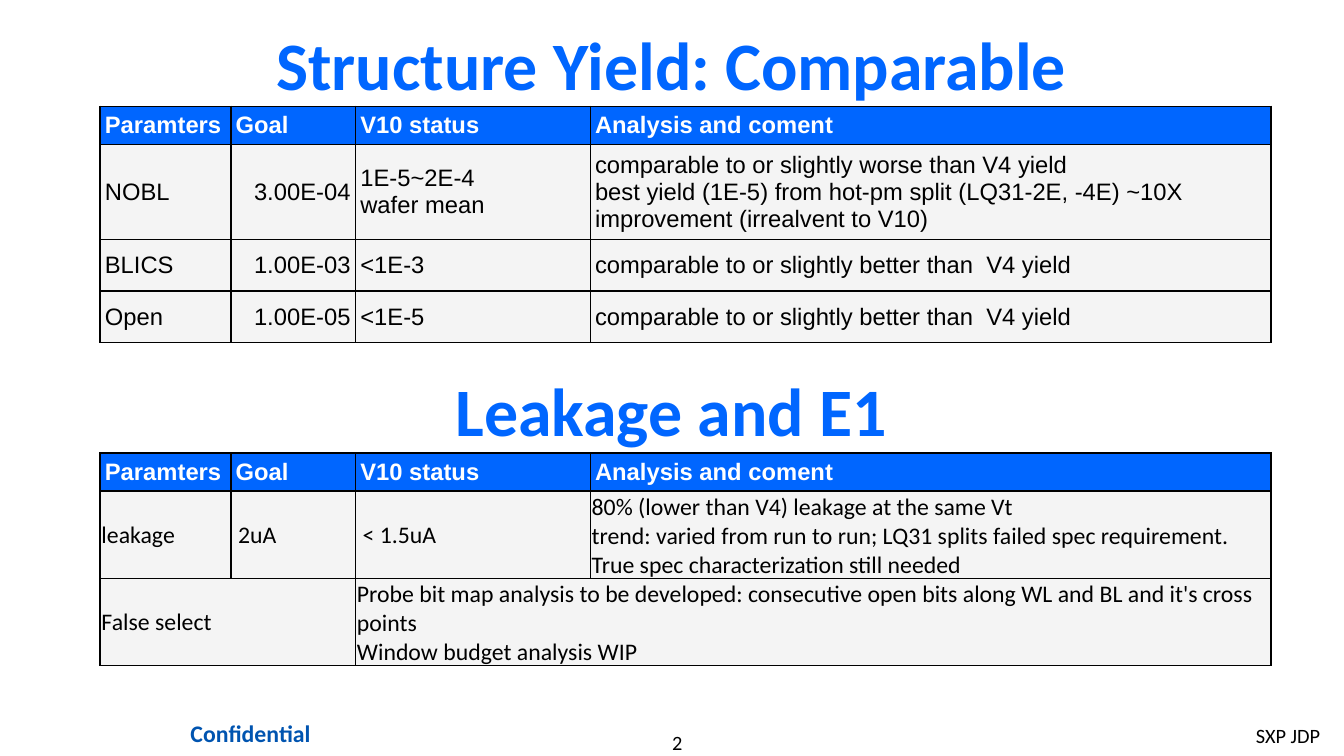
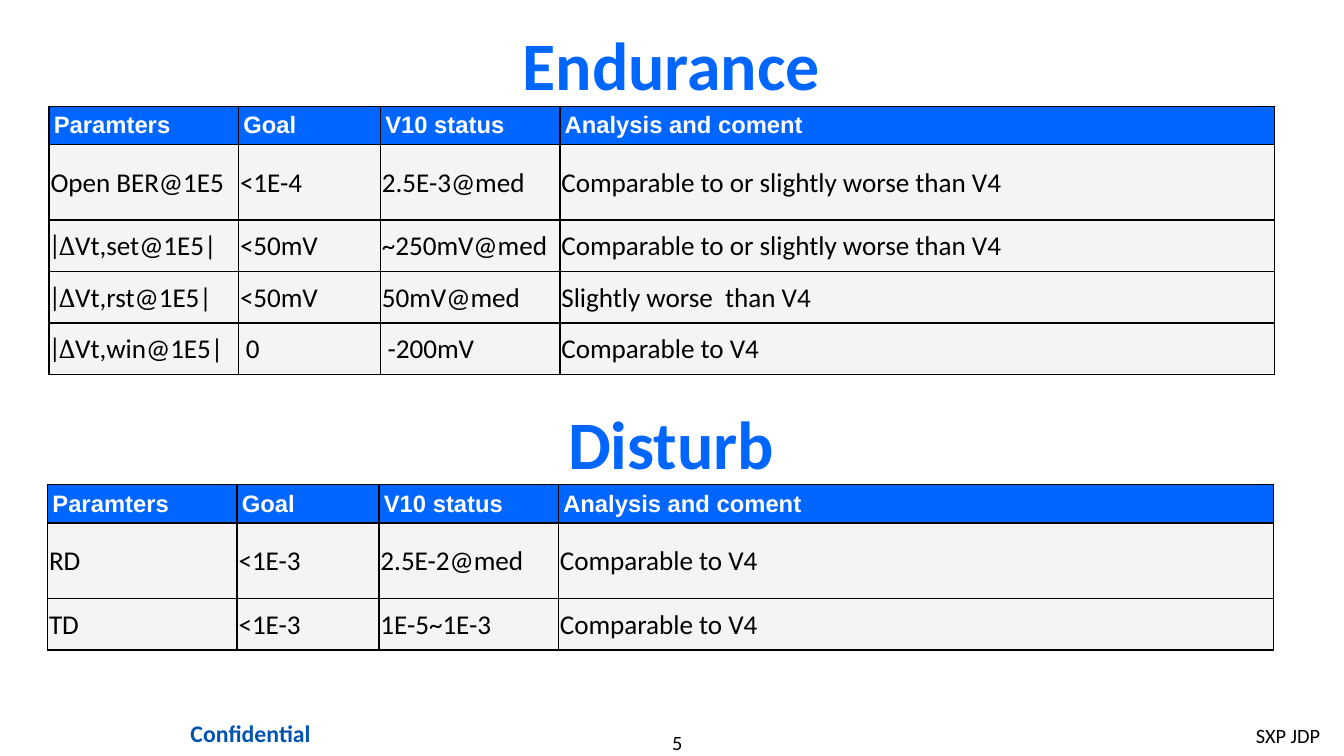
from collections import namedtuple
from dataclasses import dataclass

from lxml import etree
from pptx import Presentation
from pptx.dml.color import RGBColor
from pptx.enum.text import MSO_ANCHOR as Anchor, MSO_AUTO_SIZE as AutoSize, PP_ALIGN as Align
from pptx.oxml.ns import qn
from pptx.util import Cm, Pt


@dataclass(frozen=True)
class Theme:
    blue: str = "0066FF"
    footer_blue: str = "0054B0"
    black: str = "000000"
    white: str = "FFFFFF"
    row_grey: str = "F4F4F4"
    sans: str = "Calibri"
    grid: str = "Arial"
    symbol: str = "Cambria"
    title_size: int = 40
    table_size: int = 14
    large_size: int = 16
    footer_size: int = 12
    border: float = 1


THEME = Theme()

# Table rules: lengths in cm, insets as left, top, right, bottom
HEADINGS = ["Paramters", "Goal", "V10 status", "Analysis and coment"]
HEADER_ROW, FIRST_ROW, OTHER_ROW = 0.53, 1.57, 1.07
ROOMY = (0.1, 0.1, 0.1, 0.1)
TIGHT = (0.03, 0.03, 0.03, 0)
INDENT = 0.12
DELTA = "|∆"

BodyStyle = namedtuple("BodyStyle", "font size insets goal_align")
YIELD_BODY = BodyStyle(THEME.grid, THEME.table_size, ROOMY, Align.RIGHT)
LEAKAGE_BODY = BodyStyle(THEME.sans, THEME.table_size, TIGHT, Align.LEFT)
RELIABILITY_BODY = BodyStyle(THEME.sans, THEME.large_size, TIGHT, Align.LEFT)

# A cell whose text is set in a little, or which spans several columns
Entry = namedtuple("Entry", "text indent span", defaults=(0, 1))

YIELD_COLUMNS = (2.72, 2.59, 4.88, 14.15)
RELIABILITY_COLUMNS = (3.94, 2.95, 3.73, 14.86)

YIELD_ROWS = [
    ["NOBL", "3.00E-04", "1E-5~2E-4\vwafer mean",
     "comparable to or slightly worse than V4 yield\v"
     "best yield (1E-5) from hot-pm split (LQ31-2E, -4E) ~10X improvement (irrealvent to V10)"],
    ["BLICS", "1.00E-03", "<1E-3", "comparable to or slightly better than  V4 yield"],
    ["Open", "1.00E-05", "<1E-5", "comparable to or slightly better than  V4 yield"],
]
LEAKAGE_ROWS = [
    ["leakage", Entry("2uA", INDENT), Entry("< 1.5uA", INDENT),
     "80% (lower than V4) leakage at the same Vt\v"
     "trend: varied from run to run; LQ31 splits failed spec requirement.\v"
     "True spec characterization still needed"],
    [Entry("False select", span=2),
     Entry("Probe bit map analysis to be developed: consecutive open bits along WL and BL "
           "and it's cross points\nWindow budget analysis WIP", span=2)],
]
ENDURANCE_ROWS = [
    ["Open BER@1E5", "<1E-4", "2.5E-3@med", "Comparable to or slightly worse than V4"],
    ["|∆Vt,set@1E5|", "<50mV", "~250mV@med", "Comparable to or slightly worse than V4"],
    ["|∆Vt,rst@1E5|", "<50mV", "50mV@med", "Slightly worse  than V4"],
    ["|∆Vt,win@1E5|", Entry("0", INDENT), Entry("-200mV", INDENT), "Comparable to V4"],
]
DISTURB_ROWS = [
    ["RD", "<1E-3", "2.5E-2@med", "Comparable to V4"],
    ["TD", "<1E-3", "1E-5~1E-3", "Comparable to V4"],
]


class Deck:
    """Holds the theme and the current slide."""

    def __init__(self, theme):
        self.theme = theme
        self.presentation = Presentation()
        self.presentation.slide_width = Cm(27.94)
        self.presentation.slide_height = Cm(15.72)
        self.slide = None

    def new_slide(self, title, number):
        layout = self.presentation.slide_layouts[5]
        self.slide = self.presentation.slides.add_slide(layout)
        heading = self.slide.shapes.title
        heading.left, heading.top, heading.width, heading.height = map(Cm, (2.08, 0.36, 23.75, 1.93))
        self.style_heading(heading.text_frame, title)
        self.footer(number)

    def format_text(self, frame, font, size, color, bold=False, align=Align.LEFT):
        for paragraph in frame.paragraphs:
            paragraph.alignment = align
            for run in paragraph.runs:
                run.font.name = font
                run.font.size = Pt(size)
                run.font.bold = bold
                run.font.color.rgb = RGBColor.from_string(color)

    def style_heading(self, frame, text):
        frame.text = text
        frame.word_wrap = True
        frame.auto_size = AutoSize.NONE
        frame.vertical_anchor = Anchor.MIDDLE
        self.format_text(frame, self.theme.sans, self.theme.title_size, self.theme.blue,
                         True, Align.CENTER)

    def text_box(self, left, top, width, height):
        return self.slide.shapes.add_textbox(Cm(left), Cm(top), Cm(width), Cm(height)).text_frame

    def section_heading(self, text, top):
        self.style_heading(self.text_box(2.08, top, 23.75, 1.93), text)

    def footer(self, number):
        theme = self.theme
        page = self.text_box(11.63, 15.19, 4.9, 0.51)
        page.margin_left = page.margin_top = page.margin_right = page.margin_bottom = 0
        page.word_wrap = True
        page.text = str(number)
        self.format_text(page, theme.sans, theme.footer_size, theme.black, align=Align.CENTER)

        project = self.text_box(25.86, 14.91, 1.85, 0.76)
        project.word_wrap = False
        project.text = "SXP JDP"
        self.format_text(project, theme.sans, theme.footer_size, theme.black)

        notice = self.text_box(3.23, 14.83, 3.96, 0.86)
        notice.word_wrap = True
        notice.text = "Confidential"
        self.format_text(notice, theme.sans, theme.table_size, theme.footer_blue,
                         True, Align.CENTER)

    def style_cell(self, cell, fill, insets, indent=0):
        left, top, right, bottom = insets
        cell.margin_left, cell.margin_top = Cm(left + indent), Cm(top)
        cell.margin_right, cell.margin_bottom = Cm(right), Cm(bottom)
        cell.vertical_anchor = Anchor.MIDDLE
        # Borders go before the fill
        properties = cell._tc.get_or_add_tcPr()
        for side in ("a:lnL", "a:lnR", "a:lnT", "a:lnB"):
            line = etree.SubElement(properties, qn(side), w=str(Pt(self.theme.border)))
            solid = etree.SubElement(line, qn("a:solidFill"))
            etree.SubElement(solid, qn("a:srgbClr"), val=self.theme.black)
        cell.fill.solid()
        cell.fill.fore_color.rgb = RGBColor.from_string(fill)

    def body_cell(self, cell, entry, body, align):
        frame = cell.text_frame
        has_delta = entry.text.startswith(DELTA)
        frame.text = DELTA if has_delta else entry.text
        if has_delta:
            frame.paragraphs[0].add_run().text = entry.text[len(DELTA):]
        self.format_text(frame, body.font, body.size, self.theme.black, align=align)
        if has_delta:
            frame.paragraphs[0].runs[0].font.name = self.theme.symbol

    def table(self, left, top, columns, rows, body):
        theme = self.theme
        heights = [HEADER_ROW, FIRST_ROW] + [OTHER_ROW] * (len(rows) - 1)
        grid = self.slide.shapes.add_table(
            len(heights), len(columns), Cm(left), Cm(top), Cm(sum(columns)), Cm(sum(heights))).table
        grid.first_row = grid.horz_banding = False
        for column, width in zip(grid.columns, columns):
            column.width = Cm(width)
        for row, height in zip(grid.rows, heights):
            row.height = Cm(height)

        # Header row
        for index, heading in enumerate(HEADINGS):
            cell = grid.cell(0, index)
            cell.text_frame.text = heading
            self.format_text(cell.text_frame, theme.grid, theme.table_size, theme.white, True)
            self.style_cell(cell, theme.blue, ROOMY)

        # Body rows
        for row_index, row in enumerate(rows, 1):
            column_index = 0
            for item in row:
                entry = item if isinstance(item, Entry) else Entry(item)
                last = column_index + entry.span - 1
                cell = grid.cell(row_index, column_index)
                for covered in range(column_index, last + 1):
                    self.style_cell(grid.cell(row_index, covered), theme.row_grey,
                                    body.insets, entry.indent)
                if entry.span > 1:
                    cell.merge(grid.cell(row_index, last))
                align = body.goal_align if column_index == 1 else Align.LEFT
                self.body_cell(cell, entry, body, align)
                column_index = last + 1

    def save(self):
        self.presentation.save("out.pptx")


def main():
    deck = Deck(THEME)

    # Yield and leakage
    deck.new_slide("Structure Yield: Comparable", 2)
    deck.table(2.08, 2.21, YIELD_COLUMNS, YIELD_ROWS, YIELD_BODY)
    deck.section_heading("Leakage and E1", 7.54)
    deck.table(2.08, 9.42, YIELD_COLUMNS, LEAKAGE_ROWS, LEAKAGE_BODY)

    # Endurance and disturb
    deck.new_slide("Endurance", 5)
    deck.table(1.02, 2.21, RELIABILITY_COLUMNS, ENDURANCE_ROWS, RELIABILITY_BODY)
    deck.section_heading("Disturb", 8.23)
    deck.table(0.99, 10.08, RELIABILITY_COLUMNS, DISTURB_ROWS, RELIABILITY_BODY)

    deck.save()


if __name__ == "__main__":
    main()
